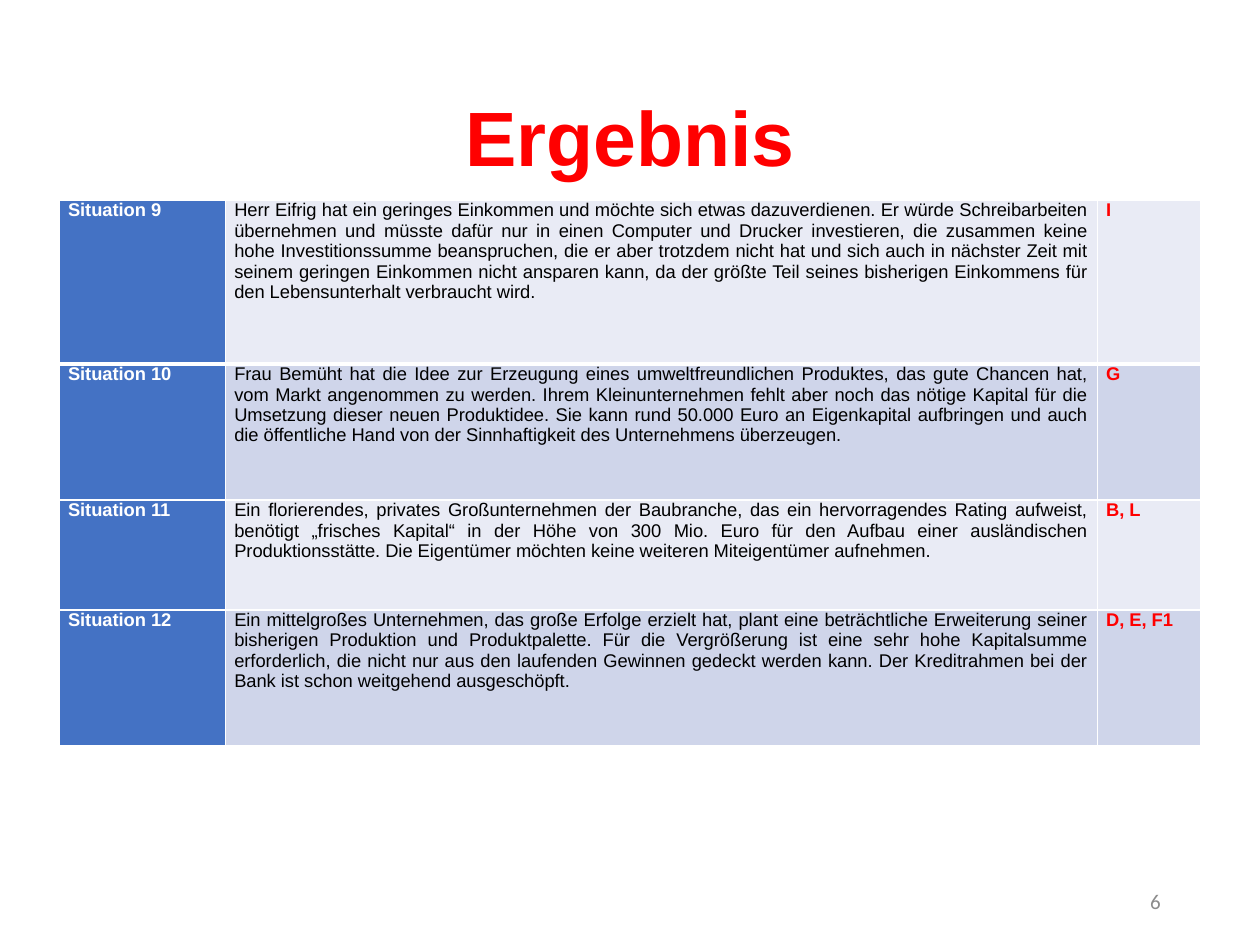
"""Build the result slide: a red title, a table of four situations and a page number."""
from dataclasses import dataclass

from lxml.etree import SubElement as Sub
from pptx import Presentation
from pptx.dml.color import RGBColor as Rgb
from pptx.enum.text import MSO_ANCHOR as Anchor, PP_ALIGN as Align
from pptx.oxml.ns import qn
from pptx.util import Inches, Pt

WIDE, HIGH = 10, 7.5


@dataclass(frozen=True)
class Theme:
    red: str = "FF0000"
    white: str = "FFFFFF"
    black: str = "000000"
    gray: str = "8C8C8C"
    blue: str = "4472C4"
    bands: tuple = ("E9EBF5", "CFD5EA")
    font: str = "Arial"
    foot: str = "Calibri"
    head: float = 44
    body: float = 10.5
    small: float = 12
    thin: float = 1
    thick: float = 3


@dataclass(frozen=True)
class Box:
    left: float
    top: float
    width: float
    height: float

    def emu(self) -> tuple:
        return (Inches(self.left * WIDE), Inches(self.top * HIGH),
                Inches(self.width * WIDE), Inches(self.height * HIGH))


@dataclass(frozen=True)
class Case:
    number: int
    story: str
    answer: str
    height: float


THEME = Theme()
TITLE = Box(0.069, 0.053, 0.862, 0.193)
PAGE = Box(0.706, 0.927, 0.225, 0.053)
GRID = Box(0.047, 0.212, 0.906, 0.577)
COLS = (0.132, 0.692, 0.082)
CASES = (
    Case(9, "Herr Eifrig hat ein geringes Einkommen und möchte sich etwas dazuverdienen. "
         "Er würde Schreibarbeiten übernehmen und müsste dafür nur in einen Computer und "
         "Drucker investieren, die zusammen keine hohe Investitionssumme beanspruchen, die "
         "er aber trotzdem nicht hat und sich auch in nächster Zeit mit seinem geringen "
         "Einkommen nicht ansparen kann, da der größte Teil seines bisherigen Einkommens "
         "für den Lebensunterhalt verbraucht wird.", "I", 1.3),
    Case(10, "Frau Bemüht hat die Idee zur Erzeugung eines umweltfreundlichen Produktes, "
         "das gute Chancen hat, vom Markt angenommen zu werden. Ihrem Kleinunternehmen "
         "fehlt aber noch das nötige Kapital für die Umsetzung dieser neuen Produktidee. "
         "Sie kann rund 50.000 Euro an Eigenkapital aufbringen und auch die öffentliche "
         "Hand von der Sinnhaftigkeit des Unternehmens überzeugen.", "G", 1.08),
    Case(11, "Ein florierendes, privates Großunternehmen der Baubranche, das ein "
         "hervorragendes Rating aufweist, benötigt „frisches Kapital“ in der Höhe von "
         "300 Mio. Euro für den Aufbau einer ausländischen Produktionsstätte. Die "
         "Eigentümer möchten keine weiteren Miteigentümer aufnehmen.", "B, L", 0.87),
    Case(12, "Ein mittelgroßes Unternehmen, das große Erfolge erzielt hat, plant eine "
         "beträchtliche Erweiterung seiner bisherigen Produktion und Produktpalette. Für "
         "die Vergrößerung ist eine sehr hohe Kapitalsumme erforderlich, die nicht nur aus "
         "den laufenden Gewinnen gedeckt werden kann. Der Kreditrahmen bei der Bank ist "
         "schon weitgehend ausgeschöpft.", "D, E, F1", 1.08),
)


def write(frame, text: str, size: float, color: str, align, bold: bool = False,
          font: str = THEME.font):
    para = frame.paragraphs[0]
    para.alignment = align
    run = para.add_run()
    run.text = text
    run.font.name, run.font.size, run.font.bold = font, Pt(size), bold
    run.font.color.rgb = Rgb.from_string(color)
    return para


def edge(cell, top: float, base: float) -> None:
    props = cell._tc.get_or_add_tcPr()
    sides = {"lnL": THEME.thin, "lnR": THEME.thin, "lnT": top, "lnB": base}
    for side, width in sides.items():
        line = Sub(props, qn(f"a:{side}"), w=str(Pt(width)))
        Sub(Sub(line, qn("a:solidFill")), qn("a:srgbClr"), val=THEME.white)


def fill(cell, text: str, color: str, back: str, bold: bool) -> None:
    cell.margin_left = cell.margin_right = Inches(0.07)
    cell.margin_top = cell.margin_bottom = 0
    cell.fill.solid()
    cell.fill.fore_color.rgb = Rgb.from_string(back)
    para = write(cell.text_frame, text, THEME.body, color, Align.JUSTIFY, bold)
    para.space_after = Pt(8)


def title(slide) -> None:
    shape = slide.shapes.title
    shape.left, shape.top, shape.width, shape.height = TITLE.emu()
    shape.text_frame.vertical_anchor = Anchor.MIDDLE
    para = write(shape.text_frame, "Ergebnis", THEME.head, THEME.red, Align.CENTER, True)
    para.line_spacing = 0.9


def table(slide) -> None:
    grid = slide.shapes.add_table(len(CASES), len(COLS), *GRID.emu()).table
    grid.horz_banding = False
    for col, share in zip(grid.columns, COLS):
        col.width = Inches(share * WIDE)
    for row, case in enumerate(CASES):
        grid.rows[row].height = Inches(case.height)
        band = THEME.bands[row % 2]
        parts = ((f"Situation {case.number}", THEME.white, THEME.blue, True),
                 (case.story, THEME.black, band, False),
                 (case.answer, THEME.red, band, True))
        for col, part in enumerate(parts):
            cell = grid.cell(row, col)
            edge(cell, THEME.thick if row == 1 else THEME.thin,
                 THEME.thick if row == 0 else THEME.thin)
            fill(cell, *part)


def page(slide) -> None:
    frame = slide.shapes.add_textbox(*PAGE.emu()).text_frame
    frame.word_wrap = True
    frame.vertical_anchor = Anchor.MIDDLE
    write(frame, "6", THEME.small, THEME.gray, Align.RIGHT, font=THEME.foot)


def main() -> None:
    deck = Presentation()
    deck.slide_width, deck.slide_height = Inches(WIDE), Inches(HIGH)
    slide = deck.slides.add_slide(deck.slide_layouts[5])
    title(slide)
    page(slide)
    table(slide)
    deck.save("out.pptx")


if __name__ == "__main__":
    main()
